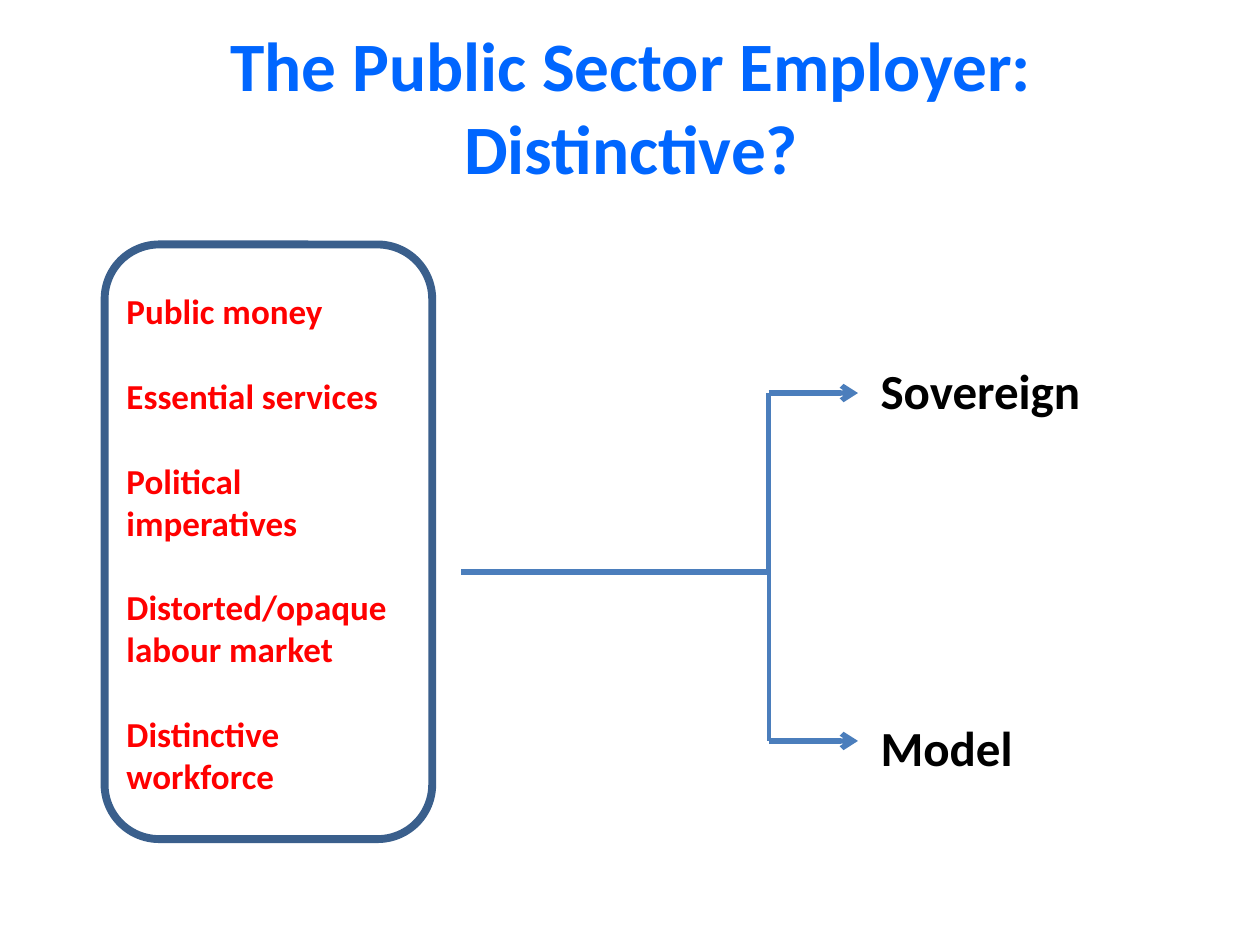
from dataclasses import dataclass

from lxml.etree import SubElement
from pptx import Presentation
from pptx.dml.color import RGBColor as Rgb
from pptx.enum.shapes import MSO_CONNECTOR as Connector, MSO_SHAPE as Shape
from pptx.enum.text import MSO_ANCHOR as Anchor, PP_ALIGN as Align
from pptx.oxml.ns import qn
from pptx.util import Pt


@dataclass(frozen=True)
class Theme:
    font: str = "Calibri"
    title: Rgb = Rgb(0x00, 0x66, 0xFF)
    feature: Rgb = Rgb(0xFF, 0x00, 0x00)
    label: Rgb = Rgb(0x00, 0x00, 0x00)
    frame: Rgb = Rgb(0x3A, 0x5F, 0x8C)
    branch: Rgb = Rgb(0x4B, 0x7E, 0xBC)
    title_size: float = 39.6
    feature_size: float = 20
    label_size: float = 28


THEME = Theme()
LINE_HEIGHT = 1.22


def add_text(page, area, paras, *, size, color, align=Align.LEFT, anchor=Anchor.TOP):
    """Add bold text; paras holds (text, blank lines of space before) pairs."""
    box = page.shapes.add_textbox(*map(Pt, area))
    frame = box.text_frame
    frame.word_wrap = True
    frame.vertical_anchor = anchor
    for index, (text, gap) in enumerate(paras):
        para = frame.paragraphs[0] if index == 0 else frame.add_paragraph()
        para.alignment = align
        para.space_before = Pt(gap * size * LINE_HEIGHT)
        span = para.add_run()
        span.text = text
        span.font.name = THEME.font
        span.font.size = Pt(size)
        span.font.bold = True
        span.font.color.rgb = color


def add_frame(page, area):
    box = page.shapes.add_shape(Shape.ROUNDED_RECTANGLE, *map(Pt, area))
    box.shadow.inherit = False
    box.fill.background()
    box.line.color.rgb = THEME.frame
    box.line.width = Pt(4.5)


def add_line(page, start, end, *, width=3, arrow=False):
    link = page.shapes.add_connector(Connector.STRAIGHT, *map(Pt, start + end))
    link.line.color.rgb = THEME.branch
    link.line.width = Pt(width)
    if arrow:
        SubElement(link.line._get_or_add_ln(), qn("a:tailEnd"), type="arrow")
    SubElement(link._element.spPr, qn("a:effectLst"))


def add_fork(page):
    left, fork, right = 263.5, 439.2, 490.3
    middle = 326.9
    add_line(page, (left, middle), (fork, middle))
    for level, width in ((224.6, 3), (423.4, 2.25)):
        add_line(page, (fork, middle), (fork, level), width=width)
        add_line(page, (fork, level), (right, level), arrow=True)


def main():
    deck = Presentation()
    deck.slide_width, deck.slide_height = Pt(720), Pt(540)
    page = deck.slides.add_slide(deck.slide_layouts[6])

    # Title
    add_text(page, (36.7, 15.1, 648, 90),
             [("The Public Sector Employer: Distinctive?", 0)],
             size=THEME.title_size, color=THEME.title,
             align=Align.CENTER, anchor=Anchor.MIDDLE)

    # Features of the employer, in a rounded frame
    features = [
        ("Public money", 0),
        ("Essential services", 1),
        ("Political imperatives", 1),
        ("Distorted/opaque", 1),
        ("labour market", 0),
        ("Distinctive workforce", 1),
    ]
    add_text(page, (65.2, 162, 166.3, 298), features,
             size=THEME.feature_size, color=THEME.feature)
    add_frame(page, (59.8, 139.7, 187.2, 339.8))

    # The two kinds of employer and the fork leading to them
    add_text(page, (496.1, 202.3, 129.6, 245), [("Sovereign", 0), ("Model", 5)],
             size=THEME.label_size, color=THEME.label)
    add_fork(page)

    deck.save("out.pptx")


if __name__ == "__main__":
    main()
